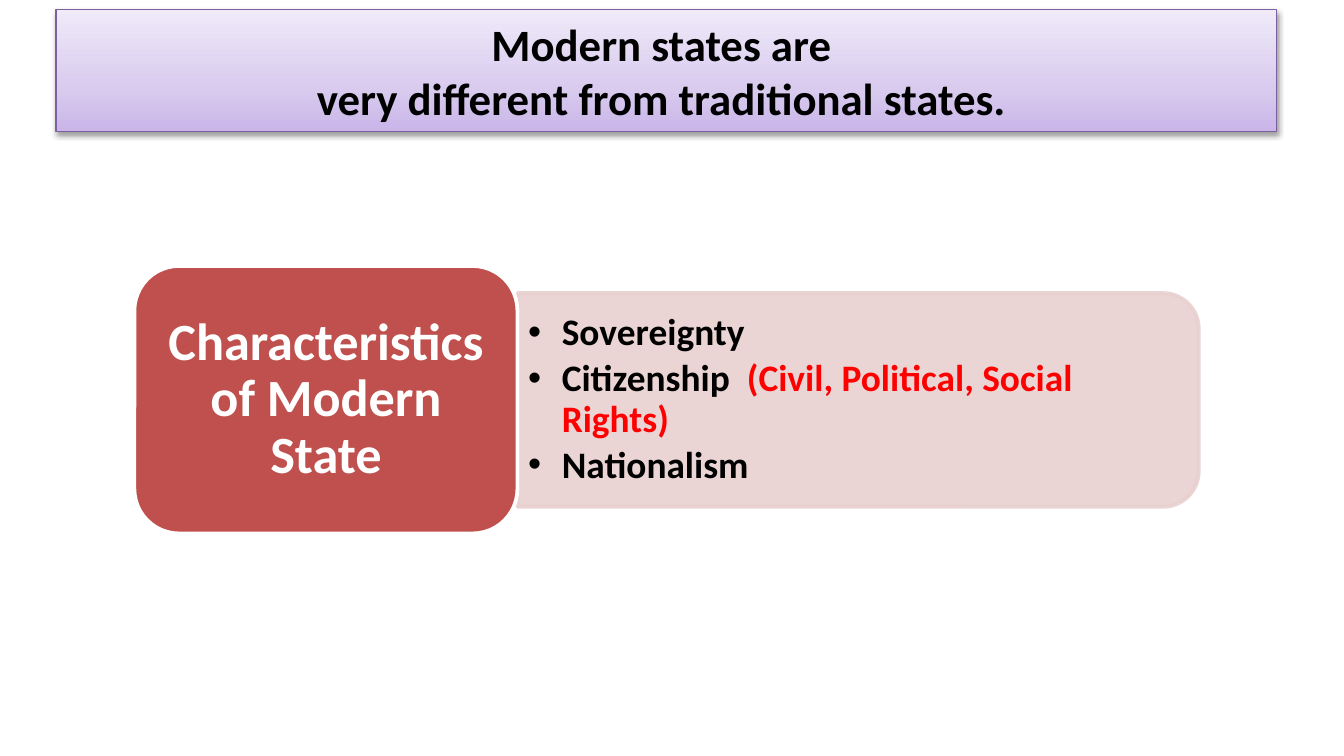
from copy import deepcopy

from pptx import Presentation
from pptx.dml.color import RGBColor
from pptx.enum.shapes import MSO_SHAPE
from pptx.enum.text import MSO_ANCHOR, MSO_AUTO_SIZE, PP_ALIGN
from pptx.oxml import parse_xml
from pptx.oxml.ns import nsdecls, qn
from pptx.util import Pt

FONT = "Calibri"
TITLE_LINES = ["Modern states are ", "very different from traditional states. "]
TITLE_STOPS = [(0, "C9B5E8"), (0.35, "D8CBEE"), (1, "F0EAF9")]
TOPIC = "Characteristics of Modern State"
TRAITS = [
    [("Sovereignty", "000000")],
    [("Citizenship  ", "000000"), ("(Civil, Political, Social Rights)", "FF0000")],
    [("Nationalism", "000000")],
]


def color(hex_code):
    return RGBColor.from_string(hex_code)


def set_font(paragraph, size, hex_code=None):
    paragraph.font.name = FONT
    paragraph.font.size = Pt(size)
    paragraph.font.bold = True
    if hex_code:
        paragraph.font.color.rgb = color(hex_code)


def place(shape, left, top, width, height):
    shape.left, shape.top = Pt(left), Pt(top)
    shape.width, shape.height = Pt(width), Pt(height)


def set_frame(shape, side, end):
    """Centre the text vertically, with the given side and top/bottom insets."""
    frame = shape.text_frame
    frame.word_wrap = True
    frame.auto_size = MSO_AUTO_SIZE.NONE
    frame.vertical_anchor = MSO_ANCHOR.MIDDLE
    frame.margin_left = frame.margin_right = Pt(side)
    frame.margin_top = frame.margin_bottom = Pt(end)
    return frame


def add_block(slide, preset, box, fill, line):
    block = slide.shapes.add_shape(preset, *(Pt(length) for length in box))
    block.shadow.inherit = False
    block.fill.solid()
    block.fill.fore_color.rgb = color(fill)
    block.line.color.rgb = color(line)
    block.line.width = Pt(2)
    return block


def fill_banner(title, box):
    place(title, *box)
    title.fill.gradient()
    title.fill.gradient_angle = 90
    properties = title._element.spPr
    stop_list = properties.find(qn("a:gradFill")).find(qn("a:gsLst"))
    stop_list.append(deepcopy(stop_list[-1]))
    for stop, (position, hex_code) in zip(title.fill.gradient_stops, TITLE_STOPS):
        stop.position = position
        stop.color.rgb = color(hex_code)
    title.line.color.rgb = color("7D60A0")
    title.line.width = Pt(0.75)

    title.shadow.inherit = False
    properties.find(qn("a:effectLst")).append(parse_xml(
        f'<a:outerShdw {nsdecls("a")} blurRad="{Pt(3.1)}" dist="{Pt(1.6)}" '
        'dir="5400000" rotWithShape="0"><a:srgbClr val="000000">'
        '<a:alpha val="38000"/></a:srgbClr></a:outerShdw>'))

    frame = set_frame(title, 7.2, 3.6)
    frame.text = "\n".join(TITLE_LINES)
    for paragraph in frame.paragraphs:
        paragraph.alignment = PP_ALIGN.CENTER
        set_font(paragraph, 24, "000000")


def add_traits(slide, body, box):
    """Draw the panel rounded on its right side and lay the list over it."""
    left, top, width, height = box
    turn = (width - height) / 2
    panel = add_block(slide, MSO_SHAPE.ROUND_2_SAME_RECTANGLE,
                      (left + turn, top - turn, height, width), "E8D0D0", "E8D0D0")
    panel.rotation = 90
    for tint in panel._element.spPr.iter(qn("a:srgbClr")):
        tint.append(parse_xml(f'<a:alpha {nsdecls("a")} val="90000"/>'))

    panel._element.addnext(body._element)
    place(body, left, top + 5.7, width - 5.7, height - 11.4)
    frame = set_frame(body, 5.76, 2.88)
    for index, trait in enumerate(TRAITS):
        paragraph = frame.add_paragraph() if index else frame.paragraphs[0]
        properties = paragraph._p.get_or_add_pPr()
        properties.set("marL", str(Pt(18)))
        properties.set("indent", str(Pt(-18)))
        properties.append(parse_xml(f'<a:buChar {nsdecls("a")} char="•"/>'))
        paragraph.line_spacing = 0.9
        paragraph.space_before = Pt(0)
        paragraph.space_after = Pt(3)
        set_font(paragraph, 20)
        for words, hex_code in trait:
            run = paragraph.add_run()
            run.text = words
            run.font.color.rgb = color(hex_code)


def add_topic(slide, box):
    topic = add_block(slide, MSO_SHAPE.ROUNDED_RECTANGLE, box, "C0504D", "FFFFFF")
    frame = set_frame(topic, 8.64, 4.32)
    frame.text = TOPIC
    paragraph = frame.paragraphs[0]
    paragraph.alignment = PP_ALIGN.CENTER
    paragraph.line_spacing = 0.9
    set_font(paragraph, 28, "FFFFFF")


def main():
    deck = Presentation()
    deck.slide_width, deck.slide_height = Pt(720), Pt(405)
    slide = deck.slides.add_slide(deck.slide_layouts[1])
    fill_banner(slide.shapes.title, (30, 5, 654, 65.5))
    add_traits(slide, slide.placeholders[1], (277.2, 157, 365, 114.5))
    add_topic(slide, (72, 142.5, 205.2, 143.3))
    deck.save("out.pptx")


if __name__ == "__main__":
    main()
